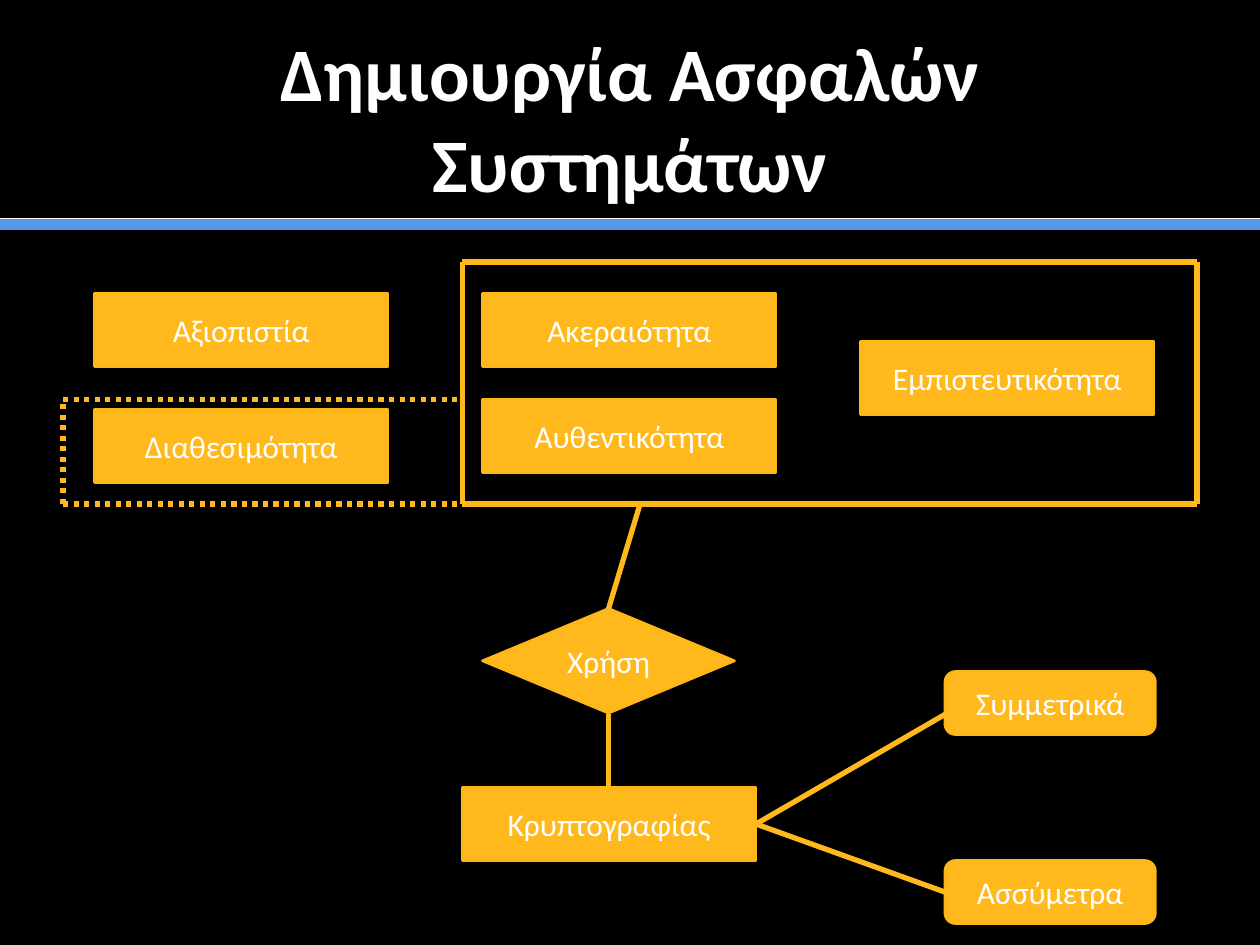
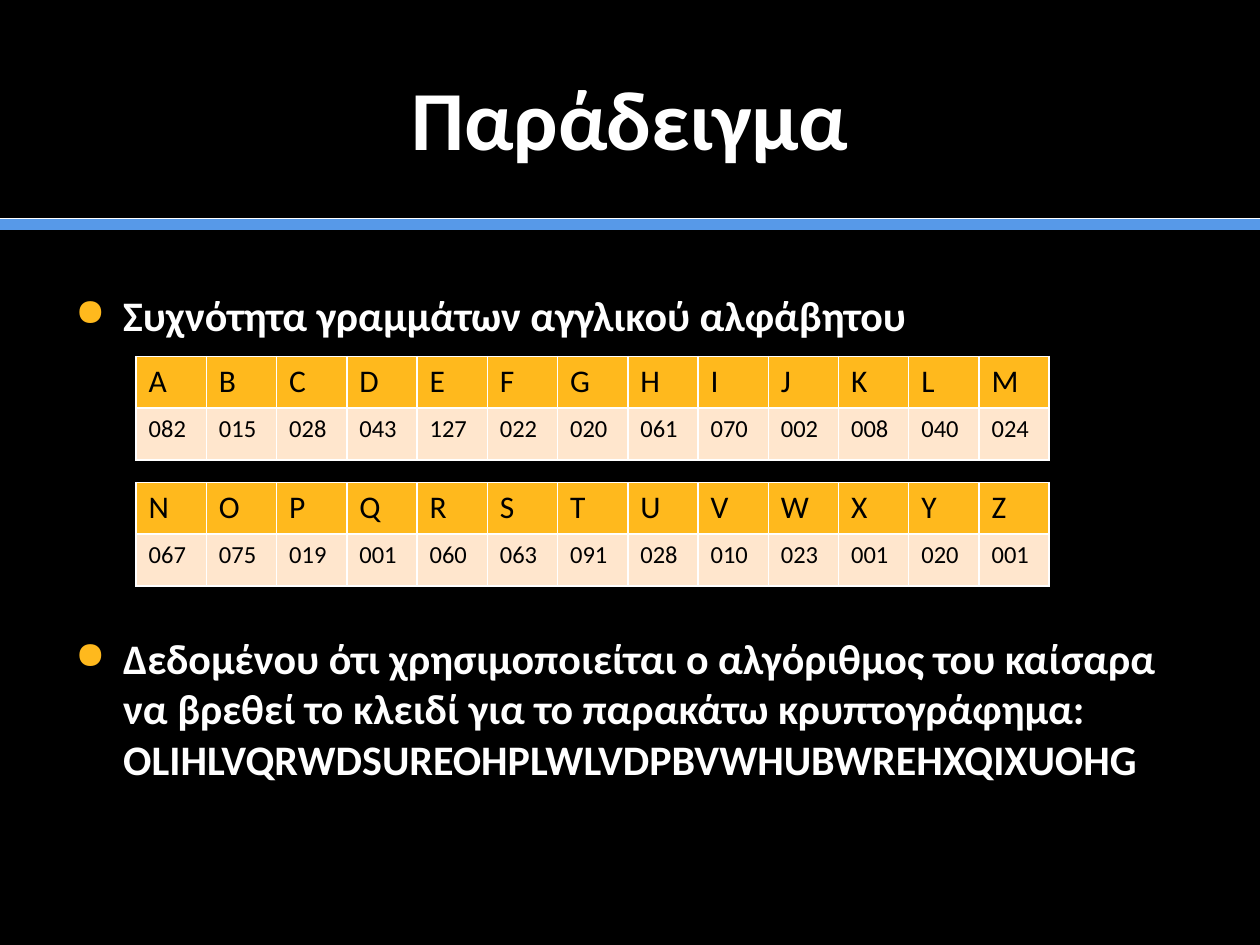
from dataclasses import dataclass
from typing import NamedTuple, Optional

from lxml.etree import SubElement
from pptx import Presentation
from pptx.dml.color import RGBColor
from pptx.enum.dml import MSO_LINE
from pptx.enum.shapes import MSO_CONNECTOR, MSO_SHAPE
from pptx.enum.text import MSO_ANCHOR, MSO_AUTO_SIZE, PP_ALIGN
from pptx.oxml.ns import qn
from pptx.util import Inches, Pt


@dataclass(frozen=True)
class Theme:
    font: str = "Calibri"
    background: str = "000000"
    text: str = "FFFFFF"
    accent: str = "FFB91D"
    accent_edge: str = "FFB717"
    band: str = "5799E8"
    cell: str = "FFE6CD"
    cell_text: str = "000000"
    title: float = 48
    long_title: float = 43.2
    body: float = 24
    label: float = 18
    value: float = 14


THEME = Theme()


class Box(NamedTuple):
    text: str
    left: float
    top: float
    width: float = 2.33
    height: float = 0.58
    kind: MSO_SHAPE = MSO_SHAPE.RECTANGLE


class Line(NamedTuple):
    x1: float
    y1: float
    x2: float
    y2: float
    color: str = THEME.accent
    width: float = 3
    dash: Optional[MSO_LINE] = None


class Frequencies(NamedTuple):
    top: float
    letters: str
    values: str


BANDS = [
    Line(0, 1.78, 10, 1.78, THEME.band, 7),
    Line(0, 1.73, 10, 1.73, THEME.text, 0.5),
]

BOXES = [
    Box("Ακεραιότητα", 3.83, 2.33),
    Box("Αυθεντικότητα", 3.83, 3.17),
    Box("Αξιοπιστία", 0.75, 2.33),
    Box("Εμπιστευτικότητα", 6.83, 2.71),
    Box("Διαθεσιμότητα", 0.75, 3.25),
    Box("Χρήση", 3.83, 4.83, 2, 0.83, MSO_SHAPE.DIAMOND),
    Box("Κρυπτογραφίας", 3.67, 6.25),
    Box("Συμμετρικά", 7.5, 5.33, 1.67, 0.5, MSO_SHAPE.ROUNDED_RECTANGLE),
    Box("Ασσύμετρα", 7.5, 6.83, 1.67, 0.5, MSO_SHAPE.ROUNDED_RECTANGLE),
]

LINKS = [
    Line(4.83, 4.83, 5.08, 4),
    Line(4.83, 5.67, 4.83, 6.25),
    Line(6, 6.54, 7.5, 5.67),
    Line(6, 6.54, 7.5, 7.08),
]

CRYPTO_FRAME = [
    Line(3.67, 2.08, 9.5, 2.08),
    Line(3.67, 2.08, 3.67, 4),
    Line(3.67, 4, 9.5, 4),
    Line(9.5, 2.08, 9.5, 4),
]

AVAILABILITY_FRAME = [
    Line(0.5, 3.17, 3.67, 3.17, dash=MSO_LINE.ROUND_DOT),
    Line(0.5, 4, 3.67, 4, dash=MSO_LINE.ROUND_DOT),
    Line(0.5, 4, 0.5, 3.17, dash=MSO_LINE.ROUND_DOT),
]

TABLES = [
    Frequencies(2.83, "ΑΒCDEFGHIJKLM",
                "082 015 028 043 127 022 020 061 070 002 008 040 024"),
    Frequencies(3.83, "NOPQRSTUVWXYZ",
                "067 075 019 001 060 063 091 028 010 023 001 020 001"),
]

# Text and the space before it in points; the second leaves room for the tables.
BULLETS = [
    ("Συχνότητα γραμμάτων αγγλικού αλφάβητου", 0),
    ("Δεδομένου ότι χρησιμοποιείται ο αλγόριθμος του καίσαρα να βρεθεί "
     "το κλειδί για το παρακάτω κρυπτογράφημα: "
     "OLIHLVQRWDSUREOHPLWLVDPBVWHUBWREHXQIXUOHG", 167),
]


def rgb(color: str) -> RGBColor:
    return RGBColor.from_string(color)


def add_run(p, text: str, size: float, color: str = THEME.text,
            bold: bool = False) -> None:
    r = p.add_run()
    r.text = text
    r.font.name = THEME.font
    r.font.size = Pt(size)
    r.font.bold = bold
    r.font.color.rgb = rgb(color)


def add_line(s, line: Line):
    ends = (Inches(v) for v in line[:4])
    c = s.shapes.add_connector(MSO_CONNECTOR.STRAIGHT, *ends)
    c.line.color.rgb = rgb(line.color)
    c.line.width = Pt(line.width)
    if line.dash:
        c.line.dash_style = line.dash
    SubElement(c.element.spPr, qn("a:effectLst"))
    return c


def add_box(s, box: Box) -> None:
    sp = s.shapes.add_shape(box.kind, Inches(box.left), Inches(box.top),
                            Inches(box.width), Inches(box.height))
    sp.shadow.inherit = False
    sp.fill.solid()
    sp.fill.fore_color.rgb = rgb(THEME.accent)
    sp.line.color.rgb = rgb(THEME.accent_edge)
    sp.line.width = Pt(1.5)
    tf = sp.text_frame
    tf.word_wrap = True
    tf.vertical_anchor = MSO_ANCHOR.MIDDLE
    p = tf.paragraphs[0]
    p.alignment = PP_ALIGN.CENTER
    add_run(p, box.text, THEME.label)


def add_titled_slide(prs, layout, title: str, size: float):
    s = prs.slides.add_slide(layout)
    sp = s.shapes.title
    sp.left, sp.top = Inches(0.5), Inches(0.3)
    sp.width, sp.height = Inches(9), Inches(1.25)
    tf = sp.text_frame
    tf.word_wrap = True
    tf.auto_size = MSO_AUTO_SIZE.NONE
    tf.vertical_anchor = MSO_ANCHOR.MIDDLE
    tf.margin_left = tf.margin_right = Inches(0.3)
    p = tf.paragraphs[0]
    p.alignment = PP_ALIGN.CENTER
    add_run(p, title, size, bold=True)
    return s


def set_bullet(p) -> None:
    pPr = p._p.get_or_add_pPr()
    pPr.set("marL", str(Inches(0.38)))
    pPr.set("indent", str(-Inches(0.38)))
    color = SubElement(pPr, qn("a:buClr"))
    SubElement(color, qn("a:srgbClr"), val=THEME.accent)
    SubElement(pPr, qn("a:buSzPct"), val="90000")
    SubElement(pPr, qn("a:buChar"), char="●")


def add_bullets(s) -> None:
    sp = s.shapes.add_textbox(Inches(0.5), Inches(2.25), Inches(9), Inches(4.92))
    tf = sp.text_frame
    tf.word_wrap = True
    for i, (text, space) in enumerate(BULLETS):
        p = tf.add_paragraph() if i else tf.paragraphs[0]
        set_bullet(p)
        if space:
            p.space_before = Pt(space)
        add_run(p, text, THEME.body, bold=True)


def format_cell(cell, text: str, size: float, fill: str) -> None:
    add_run(cell.text_frame.paragraphs[0], text, size, THEME.cell_text)
    tcPr = cell._tc.get_or_add_tcPr()
    for side in ("lnL", "lnR", "lnT", "lnB"):
        border = SubElement(tcPr, qn(f"a:{side}"), w=str(Pt(1)))
        solid = SubElement(border, qn("a:solidFill"))
        SubElement(solid, qn("a:srgbClr"), val=THEME.text)
    cell.fill.solid()
    cell.fill.fore_color.rgb = rgb(fill)


def add_frequencies(s, data: Frequencies) -> None:
    count = len(data.letters)
    table = s.shapes.add_table(2, count, Inches(1.08), Inches(data.top),
                               Inches(7.25), Inches(0.82)).table
    table.horz_banding = False
    for column in table.columns:
        column.width = Inches(7.25 / count)
    for i, (letter, value) in enumerate(zip(data.letters, data.values.split())):
        format_cell(table.cell(0, i), letter, THEME.label, THEME.accent)
        format_cell(table.cell(1, i), value, THEME.value, THEME.cell)


def style_layout(layout, s) -> None:
    """Give the layout its background and bands; s is only used to make the lines."""
    layout.background.fill.solid()
    layout.background.fill.fore_color.rgb = rgb(THEME.background)
    for band in BANDS:
        layout.shapes.element.append(add_line(s, band).element)


def main() -> None:
    prs = Presentation()
    prs.slide_width, prs.slide_height = Inches(10), Inches(7.5)
    layout = prs.slide_layouts.get_by_name("Title Only")

    s = add_titled_slide(prs, layout, "Δημιουργία Ασφαλών Συστημάτων",
                         THEME.long_title)
    style_layout(layout, s)
    for box in BOXES:
        add_box(s, box)
    for line in LINKS + CRYPTO_FRAME + AVAILABILITY_FRAME:
        add_line(s, line)

    s = add_titled_slide(prs, layout, "Παράδειγμα", THEME.title)
    add_bullets(s)
    for data in TABLES:
        add_frequencies(s, data)

    prs.save("out.pptx")


if __name__ == "__main__":
    main()
